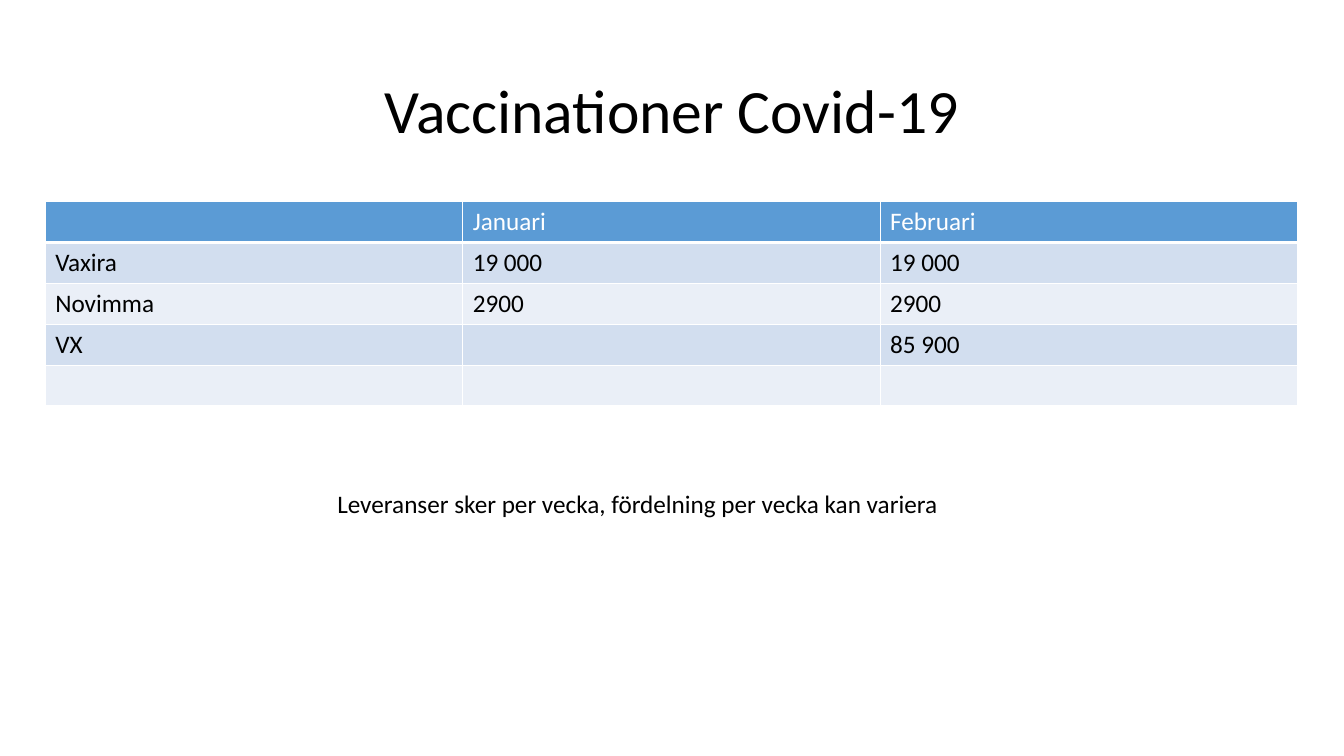
from typing import NamedTuple

from lxml.etree import SubElement as Sub
from pptx import Presentation
from pptx.dml.color import RGBColor as Rgb
from pptx.enum.text import MSO_ANCHOR as Anchor, MSO_AUTO_SIZE as Fit, PP_ALIGN as Align
from pptx.oxml.ns import qn
from pptx.util import Cm, Pt

BLACK = Rgb(0x00, 0x00, 0x00)
WHITE = Rgb(0xFF, 0xFF, 0xFF)
BLUE = Rgb(0x5B, 0x9B, 0xD5)
BANDS = (Rgb(0xD2, 0xDE, 0xEF), Rgb(0xEA, 0xEF, 0xF7))
FONT = "Calibri"


class Row(NamedTuple):
    maker: str = ""
    first: str = ""
    second: str = ""


ROWS = [
    Row("", "Januari", "Februari"),
    Row("Vaxira", "19 000", "19 000"),
    Row("Novimma", "2900", "2900"),
    Row("VX", "", "85 900"),
    Row(),
]


def add_run(para, text: str, size: int, color: Rgb) -> None:
    run = para.add_run()
    run.text = text
    font = run.font
    font.name, font.size, font.bold = FONT, Pt(size), False
    font.color.rgb = color


def add_line(cell, side: str, width: float) -> None:
    props = cell._tc.get_or_add_tcPr()
    line = Sub(props, qn(f"a:ln{side}"), w=str(Pt(width)))
    Sub(Sub(line, qn("a:solidFill")), qn("a:srgbClr"), val=str(WHITE))


def fill_cell(cell, text: str, fill: Rgb, color: Rgb, base: float) -> None:
    for side in "LRT":
        add_line(cell, side, 1)
    add_line(cell, "B", base)
    cell.fill.solid()
    cell.fill.fore_color.rgb = fill
    para = cell.text_frame.paragraphs[0]
    if text:
        add_run(para, text, 18, color)
    else:
        para.font.size = Pt(18)


def main() -> None:
    deck = Presentation()
    deck.slide_width, deck.slide_height = Cm(33.87), Cm(19.05)
    slide = deck.slides.add_slide(deck.slide_layouts[5])

    # Title
    title = slide.shapes.title
    title.left, title.top = Cm(2.33), Cm(1.02)
    title.width, title.height = Cm(29.21), Cm(3.68)
    title.text_frame.vertical_anchor = Anchor.MIDDLE
    para = title.text_frame.paragraphs[0]
    para.alignment, para.line_spacing = Align.CENTER, 0.9
    add_run(para, "Vaccinationer Covid-19", 44, BLACK)

    # Doses by month
    table = slide.shapes.add_table(
        len(ROWS), 3, Cm(1.14), Cm(5.08), Cm(31.56), Cm(5.15)).table
    for i, row in enumerate(ROWS):
        head = i == 0
        fill = BLUE if head else BANDS[(i - 1) % 2]
        for j, text in enumerate(row):
            fill_cell(table.cell(i, j), text, fill,
                      WHITE if head else BLACK, 3 if head else 1)

    # Delivery note
    note = slide.shapes.add_textbox(Cm(8.25), Cm(12.19), Cm(17.83), Cm(1.03))
    frame = note.text_frame
    frame.word_wrap, frame.auto_size = True, Fit.SHAPE_TO_FIT_TEXT
    add_run(frame.paragraphs[0],
            "Leveranser sker per vecka, fördelning per vecka kan variera", 18, BLACK)

    deck.save("out.pptx")


if __name__ == "__main__":
    main()
